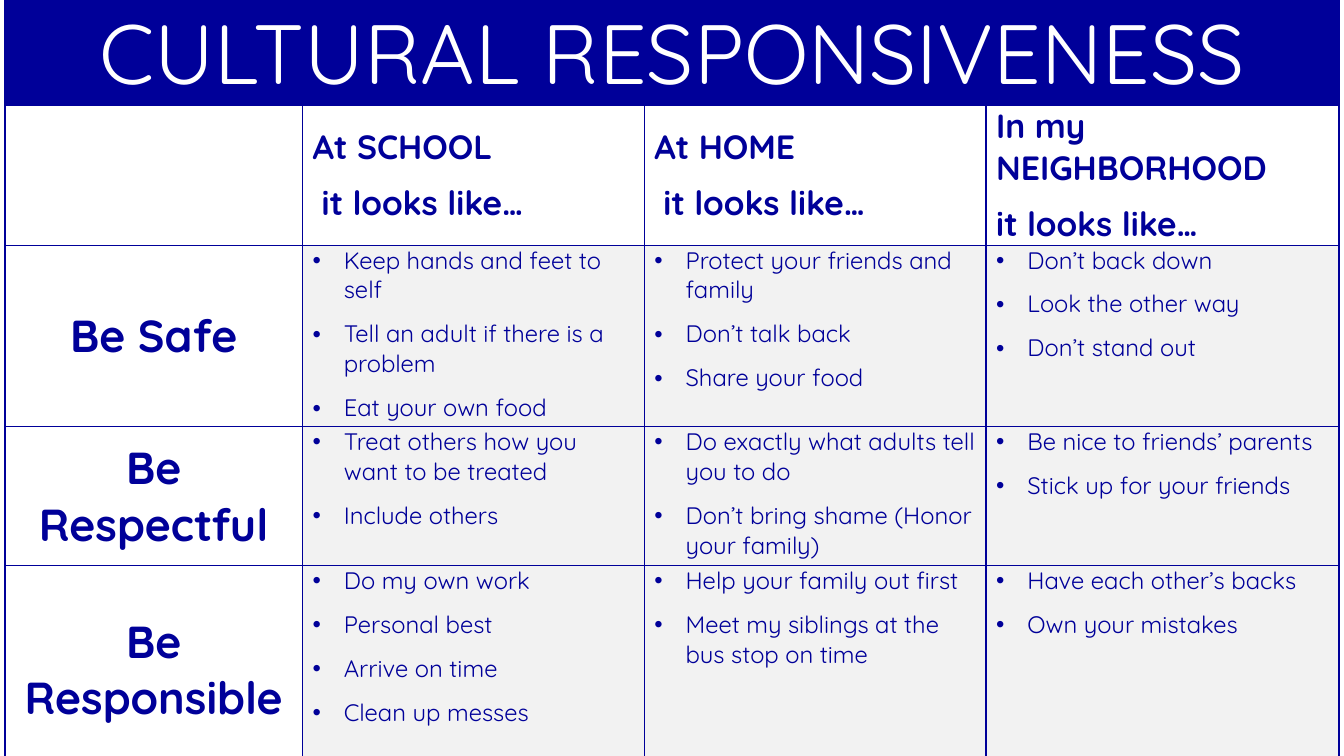
from lxml.etree import SubElement
from pptx import Presentation
from pptx.dml.color import RGBColor
from pptx.enum.text import MSO_ANCHOR, PP_ALIGN
from pptx.oxml.ns import qn
from pptx.util import Inches, Pt

TITLE = "CULTURAL RESPONSIVENESS"
PLACES = ["At SCHOOL", "At HOME", "In my NEIGHBORHOOD"]
LOOKS = "it looks like…"
EXPECTATIONS = [
    ("Be Safe", [
        ["Keep hands and feet to self", "Tell an adult if there is a problem", "Eat your own food"],
        ["Protect your friends and family", "Don’t talk back", "Share your food"],
        ["Don’t back down", "Look the other way", "Don’t stand out"],
    ]),
    ("Be Respectful", [
        ["Treat others how you want to be treated", "Include others"],
        ["Do exactly what adults tell you to do", "Don’t bring shame (Honor your family)"],
        ["Be nice to friends’ parents", "Stick up for your friends"],
    ]),
    ("Be Responsible", [
        ["Do my own work", "Personal best", "Arrive on time", "Clean up messes"],
        ["Help your family out first", "Meet my siblings at the bus stop on time"],
        ["Have each other’s backs", "Own your mistakes"],
    ]),
]
COLORS = {"navy": "000099", "white": "FFFFFF", "gray": "F2F2F2"}
FONT = "Quicksand"
COL_WIDTHS = [2.95, 3.39, 3.39, 3.5]
ROW_HEIGHTS = [1.04, 1.39, 1.8, 1.38, 2.06]
BULLET_INDENT = 0.31
LOOKS_INDENT = 0.09

STYLES = {
    "title": dict(size=Pt(60), bold=False, color="white", fill="navy", align=PP_ALIGN.CENTER),
    "place": dict(size=Pt(24), bold=True, color="navy", fill="white", align=PP_ALIGN.LEFT),
    "rule": dict(size=Pt(32), bold=True, color="navy", fill="white", align=PP_ALIGN.CENTER),
    "list": dict(size=Pt(17), bold=False, color="navy", fill="gray", align=PP_ALIGN.LEFT),
}


def rgb(name):
    return RGBColor.from_string(COLORS[name])


def add_borders(cell):
    tcPr = cell._tc.get_or_add_tcPr()
    for side in ("a:lnL", "a:lnR", "a:lnT", "a:lnB"):
        ln = SubElement(tcPr, qn(side), w=str(Pt(1)))
        SubElement(SubElement(ln, qn("a:solidFill")), qn("a:srgbClr"), val=COLORS["navy"])


def indent(p, left, bullet=False):
    pPr = p._p.get_or_add_pPr()
    pPr.set("marL", str(Inches(left)))
    pPr.set("indent", str(-Inches(left) if bullet else 0))
    if bullet:
        SubElement(pPr, qn("a:buFont"), typeface="Arial")
        SubElement(pPr, qn("a:buChar"), char="•")


def fill_cell(cell, kind, lines):
    style = STYLES[kind]
    add_borders(cell)
    cell.fill.solid()
    cell.fill.fore_color.rgb = rgb(style["fill"])
    cell.margin_left = cell.margin_right = Inches(0.1)
    cell.margin_top = cell.margin_bottom = 0
    cell.vertical_anchor = MSO_ANCHOR.TOP if kind == "list" else MSO_ANCHOR.MIDDLE
    tf = cell.text_frame
    for i, line in enumerate(lines):
        p = tf.add_paragraph() if i else tf.paragraphs[0]
        p.alignment = style["align"]
        if i:
            p.space_before = Pt(10)
        if kind == "list":
            indent(p, BULLET_INDENT, bullet=True)
        r = p.add_run()
        r.text = line
        for name, value in dict(name=FONT, size=style["size"], bold=style["bold"]).items():
            setattr(r.font, name, value)
        r.font.color.rgb = rgb(style["color"])


prs = Presentation()
prs.slide_width, prs.slide_height = Inches(13.33), Inches(7.5)
s = prs.slides.add_slide(prs.slide_layouts[6])

table = s.shapes.add_table(
    len(ROW_HEIGHTS), len(COL_WIDTHS), Inches(0.05), 0,
    Inches(sum(COL_WIDTHS)), Inches(sum(ROW_HEIGHTS))).table
table.first_row = table.horz_banding = False
for column, width in zip(table.columns, COL_WIDTHS):
    column.width = Inches(width)
for row, height in zip(table.rows, ROW_HEIGHTS):
    row.height = Inches(height)

table.cell(0, 0).merge(table.cell(0, len(COL_WIDTHS) - 1))
for c in range(len(COL_WIDTHS)):
    fill_cell(table.cell(0, c), "title", [] if c else [TITLE])

fill_cell(table.cell(1, 0), "place", [])
for c, place in enumerate(PLACES, 1):
    cell = table.cell(1, c)
    fill_cell(cell, "place", [place, LOOKS])
    if place.startswith("At"):
        indent(cell.text_frame.paragraphs[1], LOOKS_INDENT)

for r, (rule, lists) in enumerate(EXPECTATIONS, 2):
    fill_cell(table.cell(r, 0), "rule", [rule])
    for c, items in enumerate(lists, 1):
        fill_cell(table.cell(r, c), "list", items)

prs.save("out.pptx")
